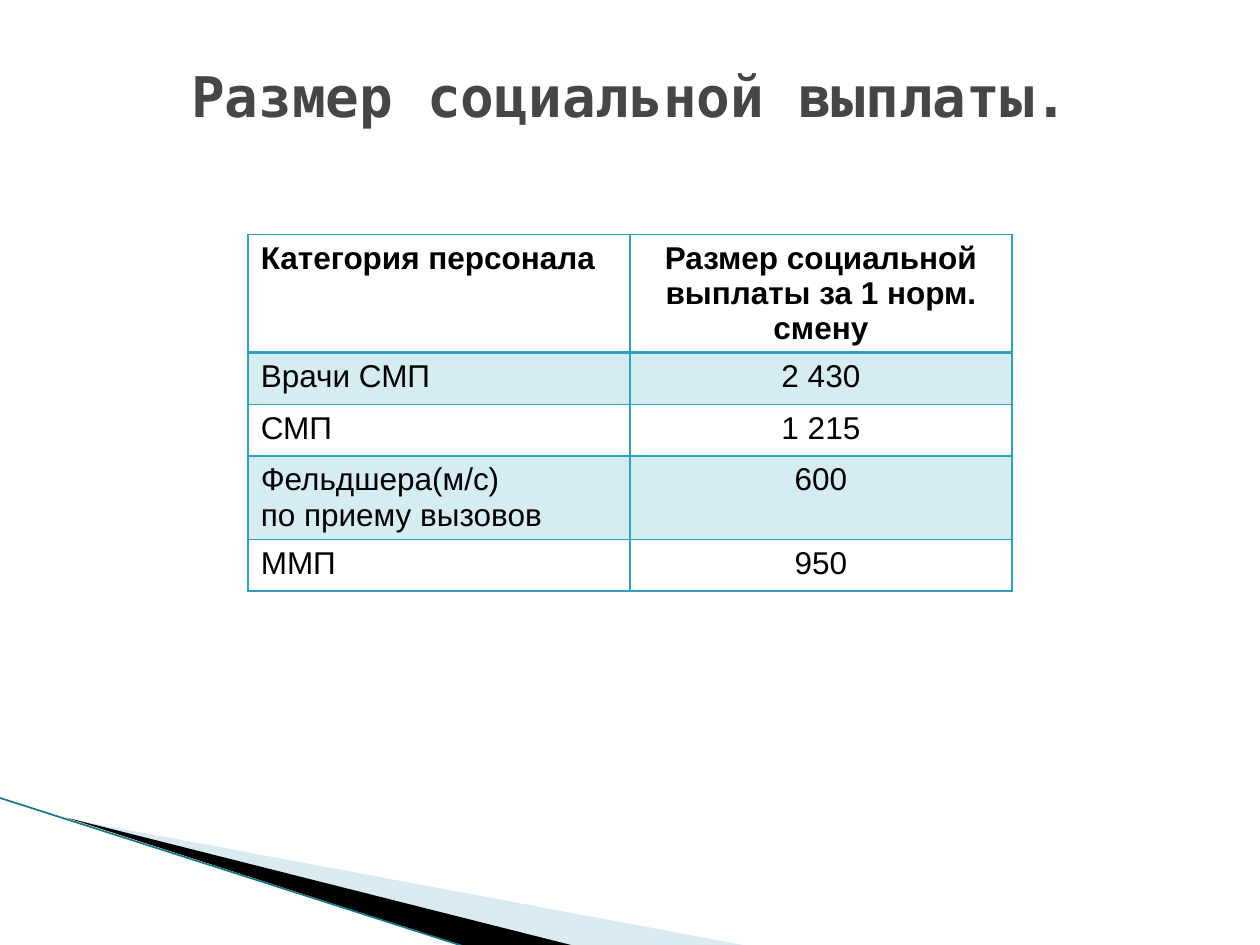
from lxml import etree
from pptx import Presentation
from pptx import util as u
from pptx.dml.color import RGBColor
from pptx.enum import shapes, text
from pptx.oxml import ns

BLACK = RGBColor(0x00, 0x00, 0x00)
TITLE_GRAY = RGBColor(0x46, 0x46, 0x46)
ACCENT = RGBColor(0x2D, 0xA2, 0xBF)
PALE_BLUE = RGBColor(0xA0, 0xCB, 0xDC)
EDGE_TEAL = RGBColor(0x17, 0x76, 0x8C)

ROWS = [
    ("Категория персонала", "Размер социальной выплаты за 1 норм. смену"),
    ("Врачи СМП", "2 430"),
    ("СМП", "1 215"),
    ("Фельдшера(м/с)\nпо приему вызовов", "600"),
    ("ММП", "950"),
]
ROW_HEIGHTS = [0.94, 0.41, 0.41, 0.66, 0.41]


class SlideBuilder:
    """Holds the style and the current slide."""

    title_font = "DejaVu Sans Mono"
    body_font = "Arial"

    def __init__(self, deck):
        self.page = deck.slides.add_slide(deck.slide_layouts[5])

    def format_text(self, frame, font, size, color, bold, align):
        for para in frame.paragraphs:
            para.alignment = align
            for span in para.runs:
                span.font.name = font
                span.font.size = u.Pt(size)
                span.font.bold = bold
                span.font.color.rgb = color

    def fill(self, target, color, opacity=100):
        target.fill.solid()
        target.fill.fore_color.rgb = color
        if opacity < 100:
            # The fill colour element is the target of the alpha value
            color_node = target.fill._xPr.find(ns.qn("a:solidFill"))[0]
            etree.SubElement(color_node, ns.qn("a:alpha"), val=str(opacity * 1000))

    def title(self, wording, left, top, width, height):
        box = self.page.shapes.title
        box.left, box.top = u.Inches(left), u.Inches(top)
        box.width, box.height = u.Inches(width), u.Inches(height)
        frame = box.text_frame
        frame.text = wording
        frame.vertical_anchor = text.MSO_ANCHOR.MIDDLE
        self.format_text(frame, self.title_font, 32, TITLE_GRAY, True,
                         text.PP_ALIGN.CENTER)

    def wedge(self, points, color, opacity=100):
        corners = [(u.Inches(x), u.Inches(y)) for x, y in points]
        builder = self.page.shapes.build_freeform(*corners[0])
        builder.add_line_segments(corners[1:], close=True)
        shape = builder.convert_to_shape()
        shape.shadow.inherit = False
        shape.line.fill.background()
        self.fill(shape, color, opacity)

    def line(self, start, end, color, width):
        ends = [u.Inches(value) for value in (*start, *end)]
        line = self.page.shapes.add_connector(shapes.MSO_CONNECTOR.STRAIGHT, *ends)
        line.line.color.rgb = color
        line.line.width = u.Pt(width)
        etree.SubElement(line._element.spPr, ns.qn("a:effectLst"))

    def cell_borders(self, cell, color, widths):
        properties = cell._tc.get_or_add_tcPr()
        for index, (side, width) in enumerate(widths.items()):
            border = etree.Element(ns.qn(f"a:ln{side}"), w=str(u.Pt(width)))
            solid = etree.SubElement(border, ns.qn("a:solidFill"))
            etree.SubElement(solid, ns.qn("a:srgbClr"), val=str(color))
            properties.insert(index, border)

    def table(self, rows, heights, left, top, width):
        frame = self.page.shapes.add_table(
            len(rows), len(rows[0]), u.Inches(left), u.Inches(top),
            u.Inches(width), u.Inches(sum(heights)))
        table = frame.table
        for column in table.columns:
            column.width = u.Inches(width / len(rows[0]))
        for row_index, row in enumerate(rows):
            table.rows[row_index].height = u.Inches(heights[row_index])
            for column_index, wording in enumerate(row):
                cell = table.cell(row_index, column_index)
                cell.text_frame.text = wording
                align = text.PP_ALIGN.CENTER if column_index else text.PP_ALIGN.LEFT
                self.format_text(cell.text_frame, self.body_font, 18, BLACK,
                                 row_index == 0, align)
                # Every second row is tinted
                if row_index % 2:
                    self.fill(cell, ACCENT, 20)
                else:
                    cell.fill.background()
                # A thicker rule separates the header
                self.cell_borders(cell, ACCENT, {
                    "L": 1, "R": 1,
                    "T": 2 if row_index == 1 else 1,
                    "B": 2 if row_index == 0 else 1,
                })


def main():
    deck = Presentation()
    deck.slide_width, deck.slide_height = u.Inches(10), u.Inches(7.5)
    builder = SlideBuilder(deck)

    # Corner decoration
    builder.wedge([(0.55, 6.5), (5.95, 7.51), (4.56, 7.51)], PALE_BLUE, 40)
    builder.wedge([(0.53, 6.49), (4.57, 7.51), (3.72, 7.52)], BLACK)
    builder.line((-0.01, 6.33), (3.71, 7.52), EDGE_TEAL, 0.95)

    # Title and payment table
    builder.title("Размер социальной выплаты.", 0.5, 0.13, 9, 1.25)
    builder.table(ROWS, ROW_HEIGHTS, 1.97, 1.86, 6.06)

    deck.save("out.pptx")


if __name__ == "__main__":
    main()
